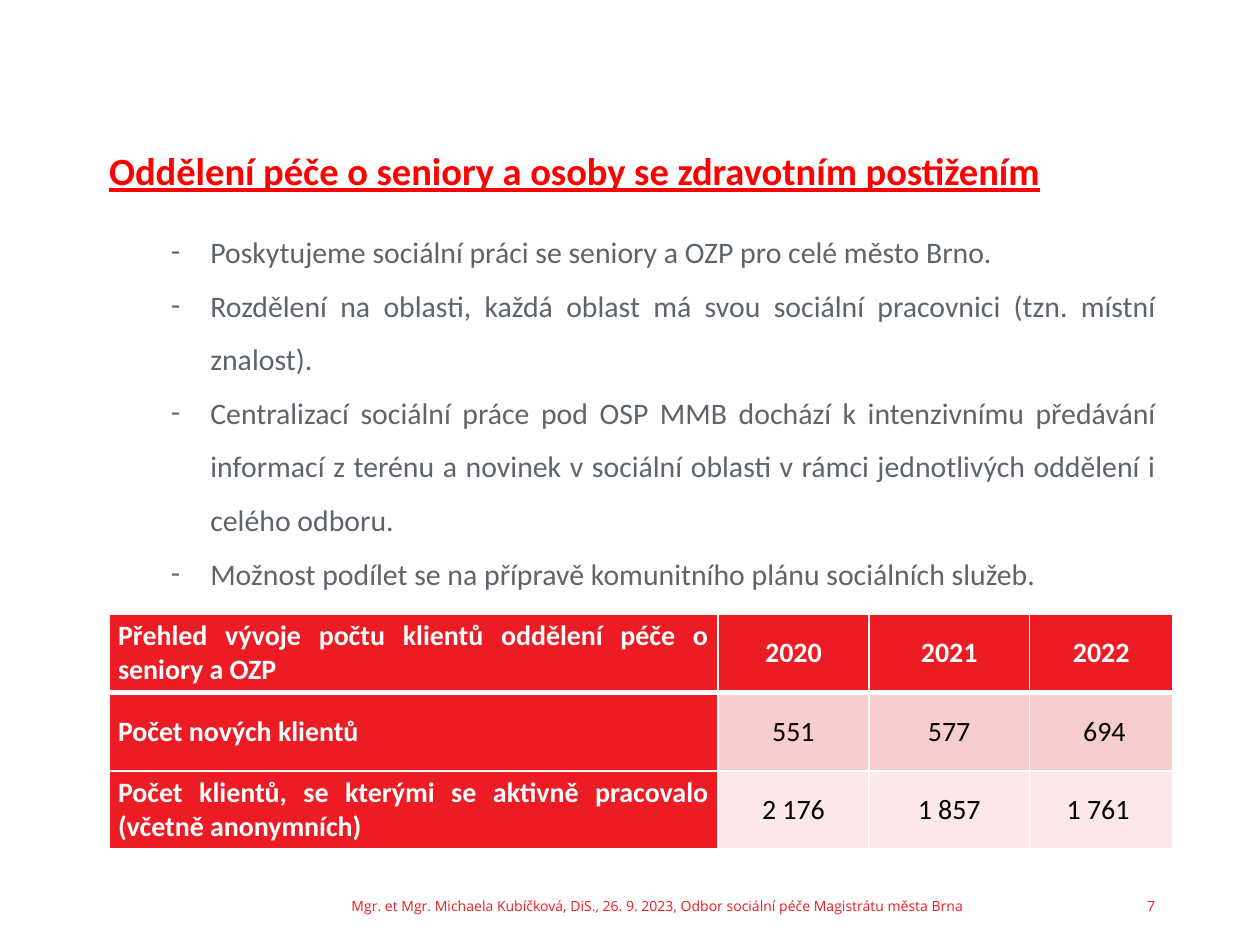
import pptx
import pptx.util
import pptx.dml.color
import pptx.enum.text
import pptx.oxml.ns
import lxml.etree

Cm, Pt = pptx.util.Cm, pptx.util.Pt
ALIGN = pptx.enum.text.PP_ALIGN
ANCHOR = pptx.enum.text.MSO_ANCHOR

TITLE = "Oddělení péče o seniory a osoby se zdravotním postižením"
POINTS = [
    "Poskytujeme sociální práci se seniory a OZP pro celé město Brno.",
    "Rozdělení na oblasti, každá oblast má svou sociální pracovnici (tzn. místní znalost).",
    "Centralizací sociální práce pod OSP MMB dochází k intenzivnímu předávání informací "
    "z terénu a novinek v sociální oblasti v rámci jednotlivých oddělení i celého odboru.",
    "Možnost podílet se na přípravě komunitního plánu sociálních služeb.",
]
ROWS = [
    ("Přehled vývoje počtu klientů oddělení péče o seniory a OZP", "2020", "2021", "2022"),
    ("Počet nových klientů", "551", "577", " 694"),
    ("Počet klientů, se kterými se aktivně pracovalo (včetně anonymních)",
     "2 176", "1 857", "1 761 "),
]
FOOTER = "Mgr. et Mgr. Michaela Kubíčková, DiS., 26. 9. 2023, Odbor sociální péče Magistrátu města Brna"
NUMBER = "7"

COLORS = {"title": "FF0000", "body": "5C646D", "accent": "ED1C24", "white": "FFFFFF",
          "black": "000000", "odd": "F8CDCD", "even": "FCE8E8"}
COL_WIDTHS = [12.27, 3.05, 3.23, 2.9]
ROW_HEIGHT = 1.58


def rgb(name):
    return pptx.dml.color.RGBColor.from_string(COLORS[name])


def add_run(p, text, size, color, font="Calibri", bold=False, underline=False):
    r = p.add_run()
    r.text = text
    f = r.font
    f.name, f.size, f.bold, f.underline = font, Pt(size), bold, underline
    f.color.rgb = rgb(color)


def place(s, left, top, width, height, anchor):
    s.left, s.top, s.width, s.height = Cm(left), Cm(top), Cm(width), Cm(height)
    tf = s.text_frame
    tf.word_wrap = True
    tf.auto_size = pptx.enum.text.MSO_AUTO_SIZE.NONE
    tf.vertical_anchor = anchor
    tf.margin_left = tf.margin_top = tf.margin_right = tf.margin_bottom = 0
    return tf


def sub(parent, tag, **attrs):
    return lxml.etree.SubElement(parent, pptx.oxml.ns.qn(tag), attrs)


def set_borders(cell, bottom):
    tcPr = cell._tc.get_or_add_tcPr()
    for side, width in (("L", 1), ("R", 1), ("T", 1), ("B", bottom)):
        ln = sub(tcPr, f"a:ln{side}", w=str(Pt(width)))
        sub(sub(ln, "a:solidFill"), "a:srgbClr", val=COLORS["white"])


def add_note(slide, text, left, width, align):
    s = slide.shapes.add_textbox(0, 0, 0, 0)
    p = place(s, left, 17.4, width, 1.02, ANCHOR.BOTTOM).paragraphs[0]
    p.alignment = align
    add_run(p, text, 8, "accent", "Open Sans")


def add_title(slide):
    tf = place(slide.shapes.title, 2.2, 2.5, 21.1, 2.07, ANCHOR.BOTTOM)
    tf.margin_bottom = Cm(0.67)
    p = tf.paragraphs[0]
    p.alignment = ALIGN.LEFT
    add_run(p, TITLE, 22, "title", bold=True, underline=True)


def add_points(slide):
    tf = place(slide.placeholders[1], 2.18, 4.35, 21.13, 13.05, ANCHOR.TOP)
    for i, text in enumerate(POINTS):
        p = tf.add_paragraph() if i else tf.paragraphs[0]
        p.level = 1
        pPr = p._p.get_or_add_pPr()
        pPr.set("marL", str(Cm(2.06)))
        pPr.set("indent", str(Cm(-0.79)))
        sub(pPr, "a:buFont", typeface="Calibri")
        sub(pPr, "a:buChar", char="-")
        p.alignment = ALIGN.JUSTIFY
        p.line_spacing = 1.5
        p.space_before = p.space_after = Pt(0)
        add_run(p, text, 17, "body")


def add_clients(slide):
    table = slide.shapes.add_table(
        len(ROWS), len(COL_WIDTHS), Cm(2.2), Cm(12.37),
        Cm(sum(COL_WIDTHS)), Cm(ROW_HEIGHT * len(ROWS))).table
    for column, width in zip(table.columns, COL_WIDTHS):
        column.width = Cm(width)
    for i, values in enumerate(ROWS):
        table.rows[i].height = Cm(ROW_HEIGHT)
        for j, text in enumerate(values):
            cell = table.cell(i, j)
            heading = i == 0 or j == 0
            set_borders(cell, 1 if i else 3)
            cell.fill.solid()
            cell.fill.fore_color.rgb = rgb("accent" if heading else "odd" if i % 2 else "even")
            cell.vertical_anchor = ANCHOR.MIDDLE
            cell.margin_left = cell.margin_right = Cm(0.18)
            cell.margin_top = cell.margin_bottom = 0
            p = cell.text_frame.paragraphs[0]
            p.alignment = ALIGN.CENTER if j else ALIGN.JUSTIFY
            add_run(p, text, 16, "white" if heading else "black", bold=heading)


def main():
    prs = pptx.Presentation()
    prs.slide_width, prs.slide_height = Cm(25.4), Cm(19)
    slide = prs.slides.add_slide(prs.slide_layouts[1])
    add_title(slide)
    add_points(slide)
    add_note(slide, FOOTER, 2.18, 22.17, ALIGN.CENTER)
    add_note(slide, NUMBER, 21.87, 1.42, ALIGN.RIGHT)
    add_clients(slide)
    prs.save("out.pptx")


if __name__ == "__main__":
    main()
